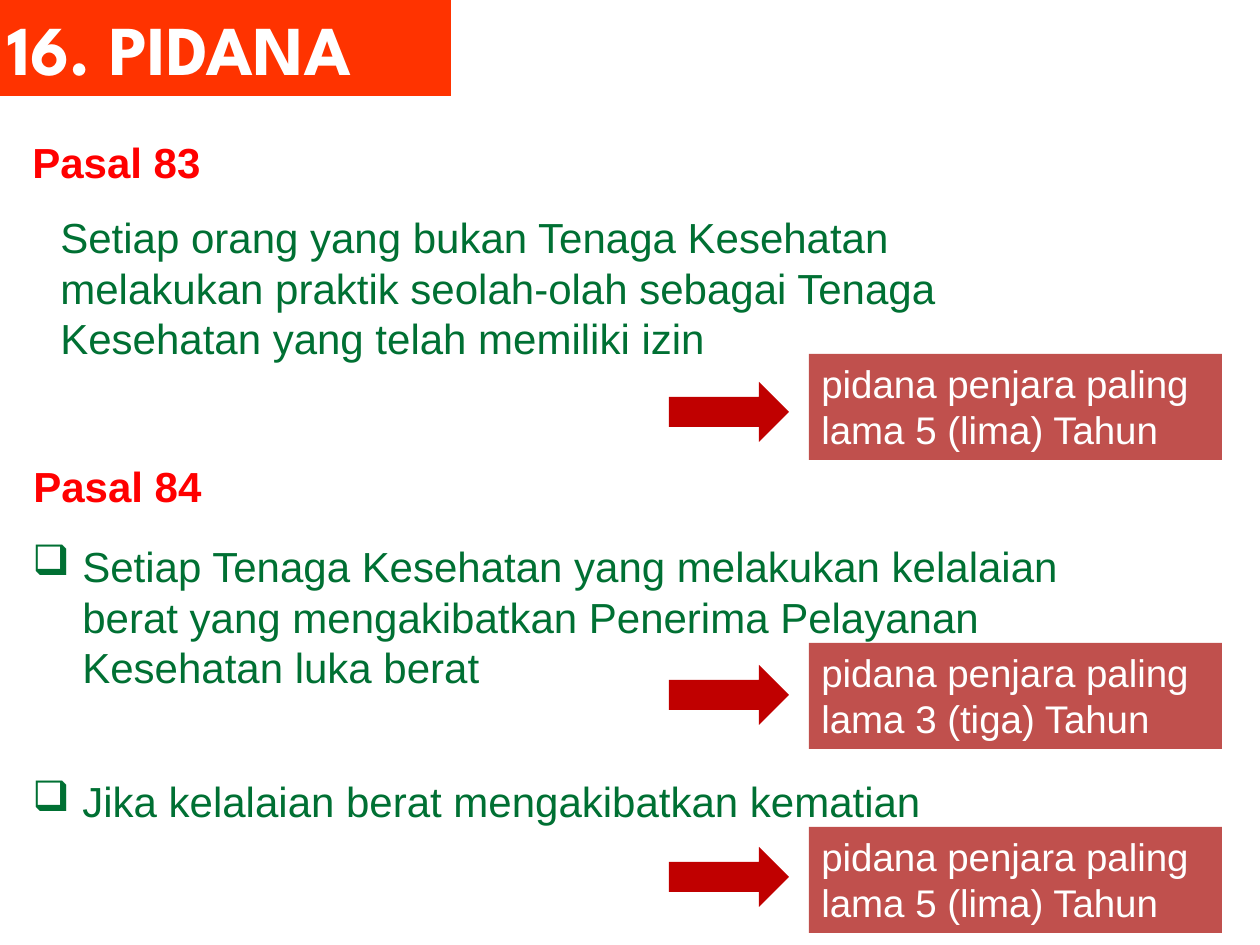
import pptx
import pptx.dml.color
import pptx.enum.shapes
import pptx.enum.text
import pptx.oxml.ns
import pptx.util
from lxml import etree

EMU_PER_PX = 914400 / 126
COLORS = {
    "banner": "FF3300",
    "heading": "FF0000",
    "body": "007033",
    "penalty": "C0504D",
    "arrow": "C00000",
    "white": "FFFFFF",
}
SHAPES = pptx.enum.shapes.MSO_SHAPE
ANCHORS = pptx.enum.text.MSO_ANCHOR


def px(length):
    return pptx.util.Emu(round(length * EMU_PER_PX))


def rgb(name):
    return pptx.dml.color.RGBColor.from_string(COLORS[name])


def write(paragraph, text, size, color, bold=False, font="Arial"):
    paragraph.alignment = pptx.enum.text.PP_ALIGN.LEFT
    run = paragraph.add_run()
    run.text = text
    run.font.name = font
    run.font.size = pptx.util.Pt(size)
    run.font.bold = bold
    run.font.color.rgb = rgb(color)


def add_block(slide, preset, box, color):
    block = slide.shapes.add_shape(preset, *map(px, box))
    block.shadow.inherit = False
    block.fill.solid()
    block.fill.fore_color.rgb = rgb(color)
    block.line.fill.background()
    return block


def add_frame(slide, box):
    frame = slide.shapes.add_textbox(*map(px, box)).text_frame
    frame.word_wrap = True
    frame.vertical_anchor = ANCHORS.MIDDLE
    return frame


def add_banner(slide, box, title):
    banner = add_block(slide, SHAPES.RECTANGLE, box, "banner").text_frame
    banner.vertical_anchor = ANCHORS.MIDDLE
    write(banner.paragraphs[0], title, 40, "white", True, "League Spartan")


def add_text(slide, box, text, color, bold=False):
    write(add_frame(slide, box).paragraphs[0], text, 24, color, bold)


def add_offences(slide, box, offences):
    """Checkbox list; each offence is a (text, space after in points) pair."""
    frame = add_frame(slide, box)
    for index, (offence, gap) in enumerate(offences):
        paragraph = frame.add_paragraph() if index else frame.paragraphs[0]
        write(paragraph, offence, 24, "body")
        paragraph.space_after = pptx.util.Pt(gap)
        properties = paragraph._p.get_or_add_pPr()
        properties.set("marL", str(px(50)))
        properties.set("indent", str(-px(50)))
        bullet = etree.SubElement(properties, pptx.oxml.ns.qn("a:buChar"))
        bullet.set("char", "❑")


def add_penalty(slide, box, arrow_drop, term):
    """Penalty box with an arrow to its left, arrow_drop below the box top."""
    left, top, width, height = box
    penalty = add_block(slide, SHAPES.RECTANGLE, box, "penalty").text_frame
    penalty.word_wrap = True
    penalty.vertical_anchor = ANCHORS.TOP
    write(penalty.paragraphs[0], f"pidana penjara paling lama {term} Tahun", 22, "white")
    add_block(slide, SHAPES.RIGHT_ARROW, (left - 140, top + arrow_drop, 120, 60), "arrow")


def main():
    deck = pptx.Presentation()
    deck.slide_width, deck.slide_height = px(1260), px(945)
    slide = deck.slides.add_slide(deck.slide_layouts[6])

    add_text(slide, (48, 205, 969, 165),
             "Setiap orang yang bukan Tenaga Kesehatan melakukan praktik "
             "seolah-olah sebagai Tenaga Kesehatan yang telah memiliki izin", "body")
    add_banner(slide, (-5, 0, 456, 96), "16. PIDANA")
    add_text(slide, (20, 130, 253, 64), "Pasal 83", "heading", True)
    add_offences(slide, (20, 528, 1085, 311), [
        ("Setiap Tenaga Kesehatan yang melakukan kelalaian berat yang "
         "mengakibatkan Penerima Pelayanan Kesehatan luka berat", 48),
        ("Jika kelalaian berat mengakibatkan kematian", 18),
    ])
    add_text(slide, (21, 454, 204, 64), "Pasal 84", "heading", True)
    for top, arrow_drop, term in ((354, 28, "5 (lima)"),
                                  (643, 22, "3 (tiga)"),
                                  (827, 20, "5 (lima)")):
        add_penalty(slide, (809, top, 413, 106), arrow_drop, term)

    deck.save("out.pptx")


if __name__ == "__main__":
    main()
